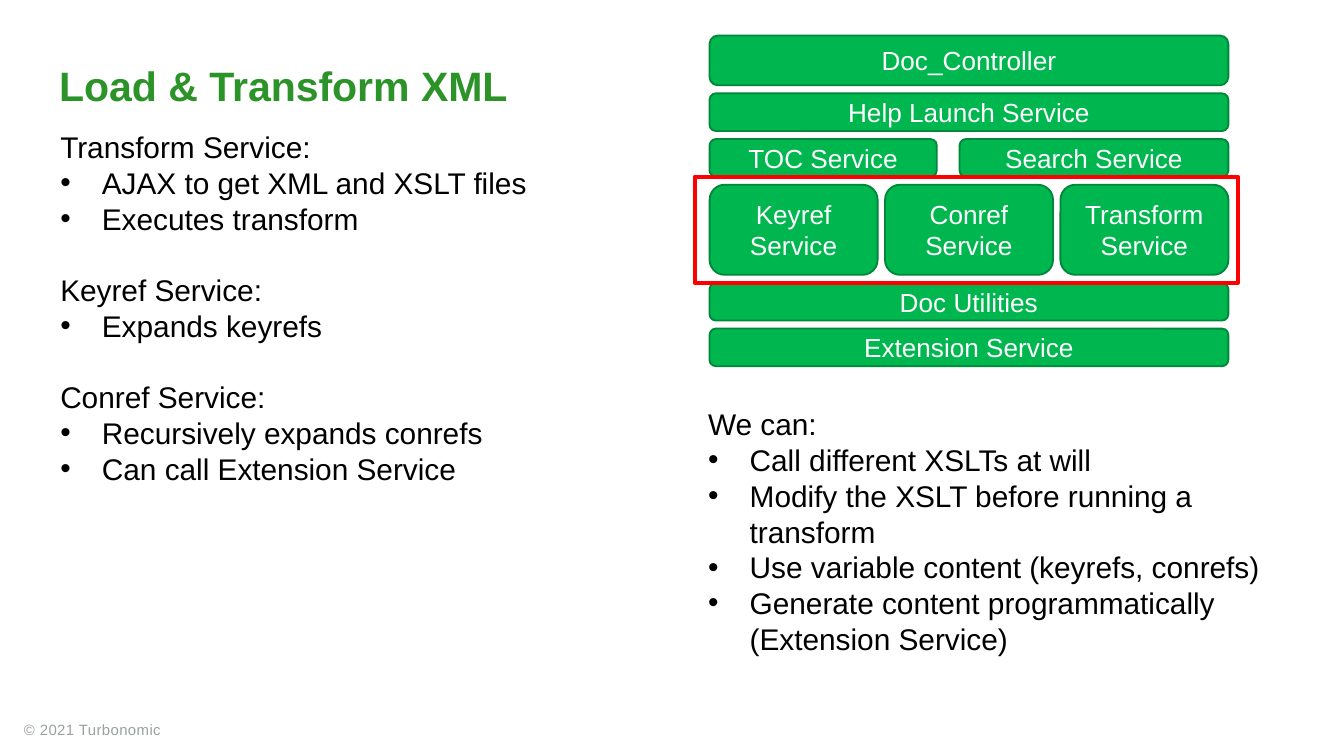
from lxml.etree import SubElement
from pptx import Presentation
from pptx.dml.color import RGBColor
from pptx.enum.shapes import MSO_SHAPE as Shape
from pptx.enum.text import MSO_ANCHOR as Anchor, PP_ALIGN as Align
from pptx.oxml.ns import qn
from pptx.util import Pt

PX = 4572  # EMU per px, 200 px to the inch
FONT = "Arial"
GREEN, DARK_GREEN, TITLE_GREEN = "00B74F", "00873A", "2C9328"
RED, BLACK, WHITE, GRAY = "FF0000", "000000", "FFFFFF", "9AA0A0"
INDENT = 62
ROW_GAP = 12
HIGHLIGHT_LEFT, HIGHLIGHT_RIGHT = 22, 14

# Rows of the service stack: height, [(label, width)], highlighted
STACK_ROWS = [
    (74, [("Doc_Controller", 772)], False),
    (56, [("Help Launch Service", 772)], False),
    (56, [("TOC Service", 338), ("Search Service", 400)], False),
    (134, [("Keyref Service", 250), ("Conref Service", 250),
           ("Transform Service", 250)], True),
    (56, [("Doc Utilities", 772)], False),
    (56, [("Extension Service", 772)], False),
]

SERVICES = [
    ("Transform Service:", ["AJAX to get XML and XSLT files", "Executes transform"]),
    ("Keyref Service:", ["Expands keyrefs"]),
    ("Conref Service:", ["Recursively expands conrefs", "Can call Extension Service"]),
]
BENEFITS = [
    ("We can:", ["Call different XSLTs at will",
                 "Modify the XSLT before running a transform",
                 "Use variable content (keyrefs, conrefs)",
                 "Generate content programmatically (Extension Service)"]),
]


def color(value):
    return RGBColor.from_string(value)


def emu(*lengths):
    return [length * PX for length in lengths]


def set_font(paragraph, size, value, bold=False):
    font = paragraph.font
    font.name, font.size, font.bold = FONT, Pt(size), bold
    font.color.rgb = color(value)


def add_shape(slide, kind, box, line, line_width, fill=None):
    shape = slide.shapes.add_shape(kind, *emu(*box))
    shape.shadow.inherit = False
    if fill:
        shape.fill.solid()
        shape.fill.fore_color.rgb = color(fill)
    else:
        shape.fill.background()
    shape.line.color.rgb = color(line)
    shape.line.width = Pt(line_width)
    return shape


def add_title(slide, box, text):
    frame = slide.shapes.add_textbox(*emu(*box)).text_frame
    frame.margin_left = frame.margin_right = 0
    frame.margin_top = frame.margin_bottom = 0
    frame.word_wrap = True
    frame.vertical_anchor = Anchor.BOTTOM
    paragraph = frame.paragraphs[0]
    paragraph.text = text
    paragraph.line_spacing = 0.9
    set_font(paragraph, 22, TITLE_GREEN, bold=True)


def add_bullet(paragraph):
    properties = paragraph._p.get_or_add_pPr()
    properties.set("marL", str(INDENT * PX))
    properties.set("indent", str(-INDENT * PX))
    SubElement(properties, qn("a:buFont"), typeface=FONT)
    SubElement(properties, qn("a:buChar"), char="•")


def add_bullet_groups(slide, box, groups):
    frame = slide.shapes.add_textbox(*emu(*box)).text_frame
    frame.word_wrap = True
    for index, (heading, items) in enumerate(groups):
        paragraph = frame.add_paragraph() if index else frame.paragraphs[0]
        paragraph.text = heading
        if index:
            paragraph.space_before = Pt(19)
        set_font(paragraph, 16, BLACK)
        for item in items:
            paragraph = frame.add_paragraph()
            paragraph.text = item
            add_bullet(paragraph)
            set_font(paragraph, 16, BLACK)


def add_service(slide, box, label):
    shape = add_shape(slide, Shape.ROUNDED_RECTANGLE, box, DARK_GREEN, 1, GREEN)
    frame = shape.text_frame
    frame.word_wrap = True
    frame.vertical_anchor = Anchor.MIDDLE
    paragraph = frame.paragraphs[0]
    paragraph.text = label
    paragraph.alignment = Align.CENTER
    set_font(paragraph, 14, WHITE)


def add_service_stack(slide, left, top, width):
    for height, services, highlighted in STACK_ROWS:
        # Equal gaps share the width the boxes leave free
        free = width - sum(size for _, size in services)
        gap = free // max(len(services) - 1, 1)
        x = left
        for label, size in services:
            add_service(slide, (x, top, size, height), label)
            x += size + gap
        if highlighted:
            frame_box = (left - HIGHLIGHT_LEFT, top - ROW_GAP,
                         width + HIGHLIGHT_LEFT + HIGHLIGHT_RIGHT,
                         height + 2 * ROW_GAP)
        top += height + ROW_GAP
    # Red frame lies over the neighbouring rows
    add_shape(slide, Shape.RECTANGLE, frame_box, RED, 2.25)


def add_footer(slide, box, text):
    frame = slide.shapes.add_textbox(*emu(*box)).text_frame
    frame.word_wrap = False
    paragraph = frame.paragraphs[0]
    run = paragraph.add_run()
    run.text = text
    run.font._element.set("spc", "20")
    set_font(paragraph, 8, GRAY)


def main():
    presentation = Presentation()
    presentation.slide_width, presentation.slide_height = emu(2000, 1125)
    slide = presentation.slides.add_slide(presentation.slide_layouts[6])

    add_footer(slide, (16, 1062, 248, 48), "© 2021 Turbonomic")
    add_title(slide, (88, 78, 712, 86), "Load & Transform XML")
    add_bullet_groups(slide, (70, 182, 856, 666), SERVICES)
    add_service_stack(slide, 1056, 53, 772)
    add_bullet_groups(slide, (1034, 594, 896, 398), BENEFITS)

    presentation.save("out.pptx")


if __name__ == "__main__":
    main()
